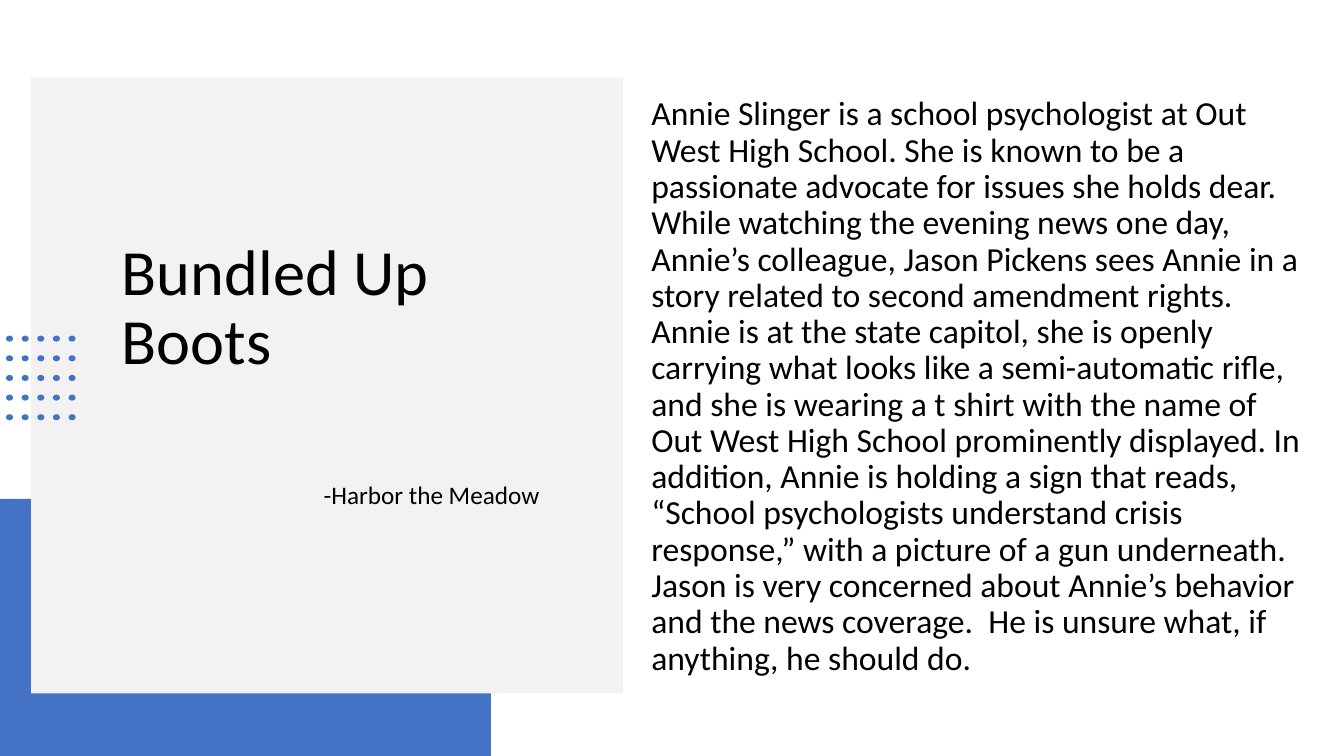
from lxml import etree
from pptx import Presentation, util as u
from pptx.dml.color import RGBColor
from pptx.enum import shapes, text
from pptx.oxml.ns import qn

COLORS = {"accent": "4472C4", "panel": "F2F2F2", "ink": "000000"}
SONG = "Bundled Up Boots"
BAND = "-Harbor the Meadow"
STORY = (
    "Annie Slinger is a school psychologist at Out West High School. "
    "She is known to be a passionate advocate for issues she holds dear.  "
    "While watching the evening news one day, Annie’s colleague, Jason Pickens "
    "sees Annie in a story related to second amendment rights.  "
    "Annie is at the state capitol, she is openly carrying what looks like a "
    "semi-automatic rifle, and she is wearing a t shirt with the name of "
    "Out West High School prominently displayed. In addition, Annie is holding "
    "a sign that reads, “School psychologists understand crisis response,” "
    "with a picture of a gun underneath. Jason is very concerned about Annie’s "
    "behavior and the news coverage.  He is unsure what, if anything, he should do."
)


def apply(target, values):
    for key, value in values.items():
        setattr(target, key, value)


class SlideBuilder:
    font = "Calibri"

    def __init__(self, deck):
        self.slide = deck.slides.add_slide(deck.slide_layouts[1])

    def block(self, kind, box, color, parent=None):
        block = (parent or self.slide).shapes.add_shape(kind, *map(u.Inches, box))
        block.shadow.inherit = False
        block.fill.solid()
        block.fill.fore_color.rgb = RGBColor.from_string(COLORS[color])
        block.line.fill.background()

    def dots(self, left, top, columns, rows, step_x, step_y):
        group = self.slide.shapes.add_group_shape()
        for column in range(columns):
            for row in range(rows):
                box = (left + column * step_x, top + row * step_y, 0.07, 0.06)
                self.block(shapes.MSO_SHAPE.OVAL, box, "accent", group)

    def words(self, holder, box, lines, frame_format):
        apply(holder, dict(zip(("left", "top", "width", "height"), map(u.Inches, box))))
        frame = holder.text_frame
        apply(frame, {"word_wrap": True, "auto_size": text.MSO_AUTO_SIZE.NONE,
                      "vertical_anchor": text.MSO_ANCHOR.MIDDLE, **frame_format})
        for index, (words, size, before, indent) in enumerate(lines):
            line = frame.add_paragraph() if index else frame.paragraphs[0]
            apply(line, {"text": words, "alignment": text.PP_ALIGN.LEFT,
                         "line_spacing": 0.9, "space_before": u.Pt(before)})
            apply(line.runs[0].font, {"name": self.font, "size": u.Pt(size)})
            line.runs[0].font.color.rgb = RGBColor.from_string(COLORS["ink"])
            props = line._p.get_or_add_pPr()
            props.set("marL", str(u.Inches(indent)))
            props.set("indent", "0")
            etree.SubElement(props, qn("a:buNone"))
        self.slide.shapes.element.append(holder.element)


def main():
    deck = Presentation()
    apply(deck, {"slide_width": u.Inches(13.33), "slide_height": u.Inches(7.5)})
    page = SlideBuilder(deck)
    title, story = page.slide.placeholders
    page.block(shapes.MSO_SHAPE.RECTANGLE, (0, 4.95, 4.87, 2.55), "accent")
    page.block(shapes.MSO_SHAPE.RECTANGLE, (0.31, 0.77, 5.87, 6.11), "panel")
    page.words(title, (1.11, 1.47, 4.59, 4.56),
               [(SONG, 46, 0, 0), (BAND, 18, 74, 2)],
               {"margin_bottom": u.Inches(0.12)})
    page.dots(0.06, 3.33, 5, 5, 0.155, 0.195)
    page.words(story, (6.36, 0.25, 6.75, 7.18), [(STORY, 24, 10, 0)], {})
    deck.save("out.pptx")


if __name__ == "__main__":
    main()
